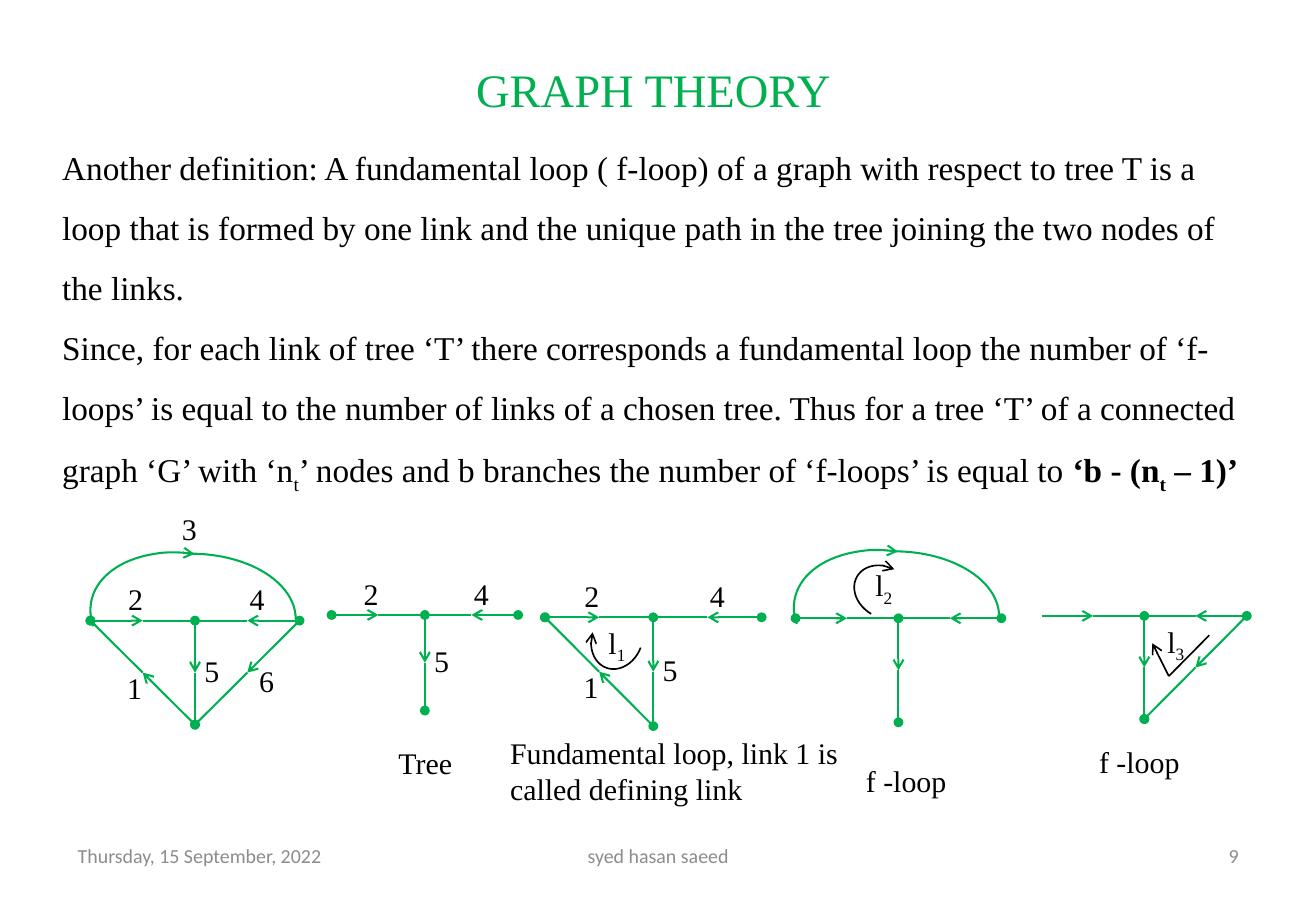
from dataclasses import dataclass

from pptx import Presentation
from pptx import util as u
from pptx.dml.color import RGBColor
from pptx.enum import shapes, text
from pptx.oxml.ns import qn
from lxml import etree

Cm = u.Cm


@dataclass(frozen=True)
class Theme:
    green: RGBColor = RGBColor(0x00, 0xB0, 0x50)
    black: RGBColor = RGBColor(0x00, 0x00, 0x00)
    grey: RGBColor = RGBColor(0x8C, 0x8C, 0x8C)
    serif: str = "Times New Roman"
    sans: str = "Calibri"
    title: int = 28
    body: int = 20
    label: int = 18
    footer: int = 12
    branch: float = 1.25
    turn: float = 1


THEME = Theme()
LEFT, CENTER, RIGHT = text.PP_ALIGN.LEFT, text.PP_ALIGN.CENTER, text.PP_ALIGN.RIGHT

# Branch number -> start node, end node, label offset from the branch middle
BRANCHES = {
    "2": ("left", "middle", (-0.56, -0.97)),
    "4": ("right", "middle", (-0.2, -0.97)),
    "5": ("middle", "bottom", (-0.05, -0.56)),
    "6": ("right", "bottom", (0, -0.34)),
    "1": ("bottom", "left", (-0.58, -0.18)),
}


def add_text(parent, box, paragraphs, size=THEME.label, color=THEME.black, font=THEME.serif,
             align=LEFT, anchor=text.MSO_ANCHOR.TOP, spacing=None):
    """Each paragraph is a list of (text, style) runs; style is '', 'sub', 'bold' or 'bold sub'."""
    shape = parent.add_textbox(*map(Cm, box))
    frame = shape.text_frame
    frame.word_wrap = True
    frame.vertical_anchor = anchor
    for index, runs in enumerate(paragraphs):
        paragraph = frame.add_paragraph() if index else frame.paragraphs[0]
        paragraph.alignment = align
        if spacing:
            paragraph.line_spacing = spacing
        for words, style in runs:
            run = paragraph.add_run()
            run.text = words
            run.font.name, run.font.size = font, u.Pt(size)
            run.font.color.rgb = color
            if "bold" in style:
                run.font.bold = True
            if "sub" in style:
                run._r.get_or_add_rPr().set("baseline", "-25000")


def style_line(shape, color, width, head=None, tail=None):
    shape.line.color.rgb = color
    shape.line.width = u.Pt(width)
    line = shape.line._get_or_add_ln()
    for tag, kind in (("a:headEnd", head), ("a:tailEnd", tail)):
        if kind:
            etree.SubElement(line, qn(tag)).set("type", kind)


def add_line(parent, start, end, color=THEME.green, width=THEME.branch, head=None, tail=None):
    line = parent.add_connector(shapes.MSO_CONNECTOR.STRAIGHT, *map(Cm, (*start, *end)))
    style_line(line, color, width, head, tail)
    etree.SubElement(line._element.spPr, qn("a:effectLst"))


def add_arc(parent, box, rotation=0, angles=(270, 0), color=THEME.green,
            width=THEME.branch, tail=None):
    """Runs clockwise between two angles in degrees, counted from the right."""
    arc = parent.add_shape(shapes.MSO_SHAPE.ARC, *map(Cm, box))
    arc.rotation = rotation
    for index, angle in enumerate(angles):
        arc.adjustments[index] = angle * 0.6  # 60000 units a degree, over 100000
    arc.fill.background()
    arc.shadow.inherit = False
    style_line(arc, color, width, tail=tail)


def add_graph(slide, box, branches, arched=False, labelled=False, open_left=False):
    """Draws the branches; the nodes are the ends and middle of the top side and the bottom middle."""
    left, top, width, height = box
    middle = left + width / 2
    nodes = {"left": (left, top), "middle": (middle, top),
             "right": (left + width, top), "bottom": (middle, top + height)}
    group = slide.shapes.add_group_shape().shapes
    for number in branches:
        start_name, end_name, (dx, dy) = BRANCHES[number]
        start, end = nodes[start_name], nodes[end_name]
        half = tuple((a + b) / 2 for a, b in zip(start, end))
        dotted_start = number == "4" or (number == "2" and not open_left)
        add_line(group, start, half, head="oval" if dotted_start else None, tail="arrow")
        add_line(group, half, end, tail=None if number == "4" else "oval")
        if labelled:
            add_text(group, (half[0] + dx, half[1] + dy, 1.19, 1.02), [[(number, "")]])
    if arched:
        add_arc(group, (middle - 1.55, top - 2.11, 2.77, 4.14), 279.6, (255.86, 356.82),
                tail="arrow")
        add_arc(group, (middle - 2.31, top - 1.42, 4.45, 2.77))
        if labelled:
            add_text(group, (middle - 0.53, top - 2.46, 1.19, 1.02), [[("3", "")]])


def add_caption(slide, box, words, offset, width, height=1.02):
    left, top = box[0] + box[2] / 2 + offset[0], box[1] + offset[1]
    add_text(slide.shapes, (left, top, width, height), [[(words, "")]])


def add_turn(slide, box, number, label_offset, arc_offset=None, rotation=0, bend=()):
    """Marks a loop with its name and a curved arrow, or a bent one through the bend points."""
    x, y = box[0] + box[2] / 2, box[1]
    pen = {"color": THEME.black, "width": THEME.turn}
    if arc_offset:
        add_arc(slide.shapes, (x + arc_offset[0], y + arc_offset[1], 1.32, 1.07),
                rotation, (270, 84.05), tail="arrow", **pen)
    if bend:
        start, corner, tip = [(x + dx, y + dy) for dx, dy in bend]
        group = slide.shapes.add_group_shape().shapes
        add_line(group, start, corner, **pen)
        add_line(group, corner, tip, tail="arrow", **pen)
    add_text(slide.shapes, (x + label_offset[0], y + label_offset[1], 1.19, 1.02),
             [[("l", ""), (number, "sub")]])


def add_footer(slide, box):
    left, top, width, height = box
    parts = (("Thursday, 15 September, 2022", 0, 6.53, LEFT),
             ("syed hasan saeed", (width - 8.84) / 2, 8.84, CENTER),
             ("9", width - 6.53, 6.53, RIGHT))
    for words, offset, part_width, align in parts:
        add_text(slide.shapes, (left + offset, top, part_width, height), [[(words, "")]],
                 THEME.footer, THEME.grey, THEME.sans, align, text.MSO_ANCHOR.MIDDLE)


def add_title(slide, box):
    add_text(slide.shapes, box, [[("GRAPH THEORY", "")]], THEME.title, THEME.green,
             align=CENTER, anchor=text.MSO_ANCHOR.MIDDLE)


def add_definition(slide, box):
    add_text(slide.shapes, box, [
        [("Another definition: A fundamental loop ( f-loop) of a graph with respect to tree T "
          "is a loop that is formed by one link and the unique path in the tree joining the "
          "two nodes of the links.", "")],
        [("Since, for each link of tree ‘T’ there corresponds a fundamental loop the number of "
          "‘f-loops’ is equal to the number of links of a chosen tree. Thus for a tree ‘T’ of a "
          "connected graph ‘G’ with ‘n", ""), ("t", "sub"),
         ("’ nodes and b branches the number of ‘f-loops’ is equal to ", ""),
         ("‘b - (n", "bold"), ("t", "bold sub"), (" – 1)’", "bold")],
    ], THEME.body, spacing=1.5)


def add_graphs(slide):
    whole = (1.92, 13.18, 4.44, 2.21)
    tree = (7.04, 13.06, 3.96, 2.03)
    loop_1 = (11.57, 13.11, 4.6, 2.31)
    loop_2 = (16.89, 13.13, 4.37, 2.21)
    loop_3 = (22.12, 13.08, 4.35, 2.19)

    add_graph(slide, whole, "24561", arched=True, labelled=True)
    add_graph(slide, tree, "245", labelled=True)
    add_graph(slide, loop_1, "2451", labelled=True)
    add_graph(slide, loop_2, "245", arched=True)
    add_graph(slide, loop_3, "2456", open_left=True)

    add_turn(slide, loop_1, "1", (-1.2, 0.03), (-1.43, -0.08), 110.7)
    add_turn(slide, loop_2, "2", (-0.74, -1.22), (-0.97, -1.09), 210.4)
    add_turn(slide, loop_3, "3", (0.24, 0.03),
             bend=((1.38, 0.41), (0.52, 1.28), (0.17, 0.58)))

    add_caption(slide, tree, "Tree", (-0.81, 2.62), 2.18)
    add_caption(slide, loop_1, "Fundamental loop, link 1 is called defining link",
                (-3.29, 2.36), 7.75, 1.8)
    add_caption(slide, loop_2, "f -loop", (-0.94, 2.95), 2.59)
    add_caption(slide, loop_3, "f -loop", (-1.21, 2.59), 2.59)


def main():
    presentation = Presentation()
    presentation.slide_width, presentation.slide_height = Cm(27.94), Cm(19.05)
    slide = presentation.slides.add_slide(presentation.slide_layouts[6])
    add_footer(slide, (1.4, 17.65, 25.15, 1.02))
    add_title(slide, (0.66, 0.99, 26.42, 1.78))
    add_definition(slide, (1.07, 2.59, 25.98, 7.95))
    add_graphs(slide)
    presentation.save("out.pptx")


if __name__ == "__main__":
    main()
